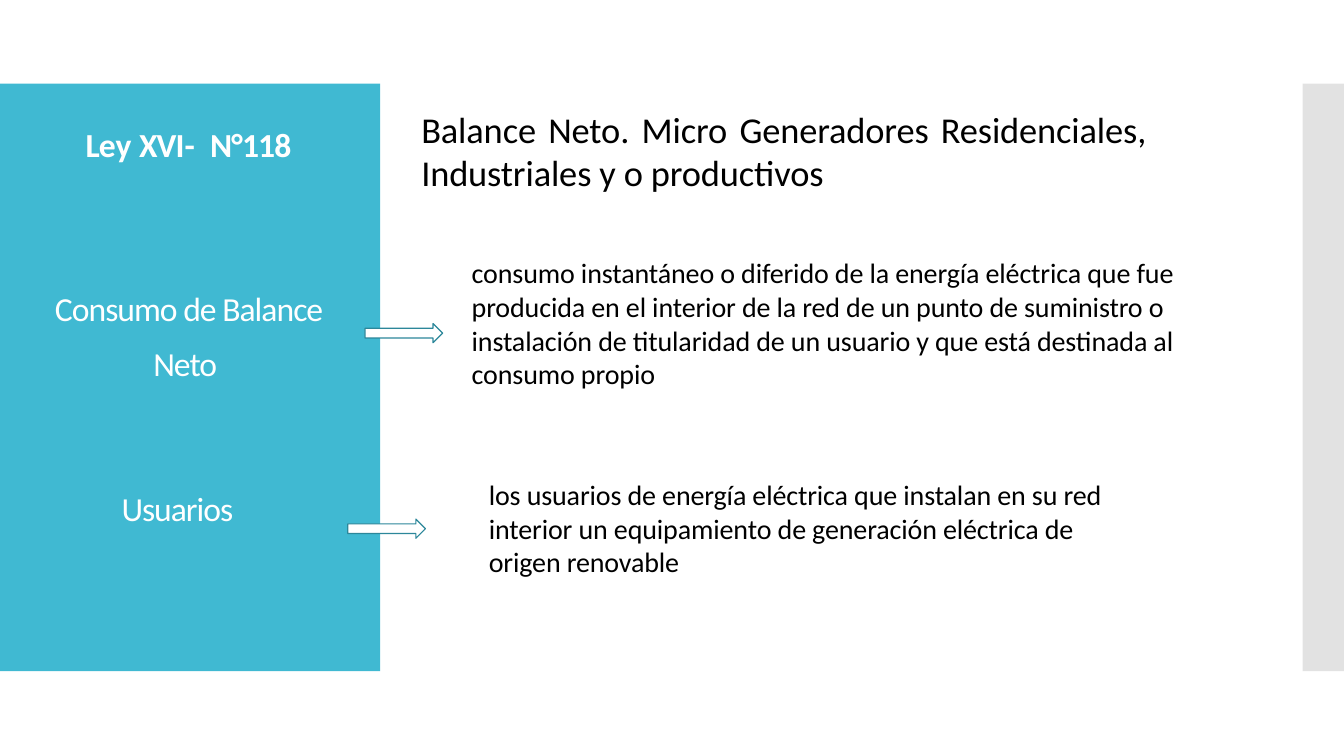
"""Builds the slide on Ley XVI N°118 and net balance."""
from lxml.etree import SubElement
from pptx import Presentation
from pptx.dml.color import RGBColor
from pptx.enum.shapes import MSO_SHAPE as Shape
from pptx.enum.text import MSO_AUTO_SIZE as AutoSize, PP_ALIGN as Align
from pptx.oxml.ns import qn
from pptx.util import Inches, Pt

TEAL = RGBColor(0x40, 0xB9, 0xD2)
DARK_TEAL = RGBColor(0x2C, 0x87, 0x9A)
GRAY = RGBColor(0xC7, 0xC7, 0xC7)
WHITE = RGBColor(0xFF, 0xFF, 0xFF)
BLACK = RGBColor(0x00, 0x00, 0x00)
PANEL_TOP, PANEL_HEIGHT = 0.83, 5.83


def add_panel(slide, left, width, color, opacity=100):
    """Add a side panel, see-through when the opacity is below 100."""
    panel = slide.shapes.add_shape(Shape.RECTANGLE, Inches(left), Inches(PANEL_TOP),
                                   Inches(width), Inches(PANEL_HEIGHT))
    panel.shadow.inherit = False
    panel.fill.solid()
    panel.fill.fore_color.rgb = color
    panel.line.fill.background()
    if opacity < 100:
        tint = panel._element.spPr.find(".//" + qn("a:srgbClr"))
        SubElement(tint, qn("a:alpha"), val=str(opacity * 1000))


def add_arrow(slide, left, top):
    """Add a white arrow from a term to its definition."""
    arrow = slide.shapes.add_shape(Shape.RIGHT_ARROW, Inches(left), Inches(top),
                                   Inches(0.77), Inches(0.19))
    arrow.shadow.inherit = False
    arrow.fill.solid()
    arrow.fill.fore_color.rgb = WHITE
    arrow.line.color.rgb = DARK_TEAL
    arrow.line.width = Pt(0.84)


def add_text(slide, box, runs, size, color, bold=False, wrap=True):
    """Add a text box from (text, letter spacing) runs and return it."""
    block = slide.shapes.add_textbox(*map(Inches, box))
    frame = block.text_frame
    frame.word_wrap = wrap
    frame.auto_size = AutoSize.SHAPE_TO_FIT_TEXT
    for text, spacing in runs:
        run = frame.paragraphs[0].add_run()
        run.text = text
        run.font.name = "Calibri"
        run.font.size = Pt(size)
        run.font.bold = bold
        run.font.color.rgb = color
        run._r.get_or_add_rPr().set("spc", str(round(spacing * 100)))
    return frame


def add_term(slide, box, runs, bold=False, wrap=True):
    """Add a centred white term on the teal panel."""
    frame = add_text(slide, box, runs, 24, WHITE, bold, wrap)
    if wrap:
        frame.margin_left = frame.margin_right = frame.margin_bottom = 0
        frame.margin_top = Inches(0.08)
    term = frame.paragraphs[0]
    term.alignment = Align.CENTER
    term.line_spacing = Pt(38.9)
    term.space_before = Pt(5.8)


def add_definition(slide, box, text):
    """Add the definition that an arrow points to."""
    add_text(slide, box, [(text, -0.1)], 20, BLACK)


def add_heading(slide, box, text):
    """Add the justified heading with its right indent."""
    heading = add_text(slide, box, [(text, -0.1)], 26, BLACK).paragraphs[0]
    heading.alignment = Align.JUSTIFY
    heading._p.get_or_add_pPr().set("marR", str(Inches(1.13)))


def main():
    """Build and save the slide."""
    deck = Presentation()
    deck.slide_width, deck.slide_height = Inches(13.33), Inches(7.5)
    slide = deck.slides.add_slide(deck.slide_layouts[6])

    add_panel(slide, 0, 3.77, TEAL)
    add_panel(slide, 12.92, 0.41, GRAY, opacity=50)

    add_term(slide, (0.33, 1.01, 3.08, 0.58),
             [("Le", -0.7), ("y ", 0), ("XVI", -0.7), ("-  ", 0), ("N°118", -0.6)], bold=True)
    add_heading(slide, (4.08, 1.01, 8.52, 0.98),
                "Balance Neto. Micro Generadores Residenciales, Industriales y o productivos")

    add_term(slide, (0.33, 2.64, 3.08, 1.13), [("Consumo de Balance Neto ", -0.7)])
    add_arrow(slide, 3.62, 3.21)
    add_definition(slide, (4.58, 2.49, 7.92, 1.45),
                   "consumo instantáneo o diferido de la energía eléctrica que fue producida "
                   "en el interior de la red de un punto de suministro o instalación de "
                   "titularidad de un usuario y que está destinada al consumo propio")

    add_term(slide, (1.08, 4.65, 1.36, 0.6), [("Usuarios", -0.7)], wrap=False)
    add_arrow(slide, 3.45, 5.15)
    add_definition(slide, (4.75, 4.69, 6.64, 1.11),
                   "los usuarios de energía eléctrica que instalan en su red interior un "
                   "equipamiento de generación eléctrica de origen renovable")

    deck.save("out.pptx")


if __name__ == "__main__":
    main()
